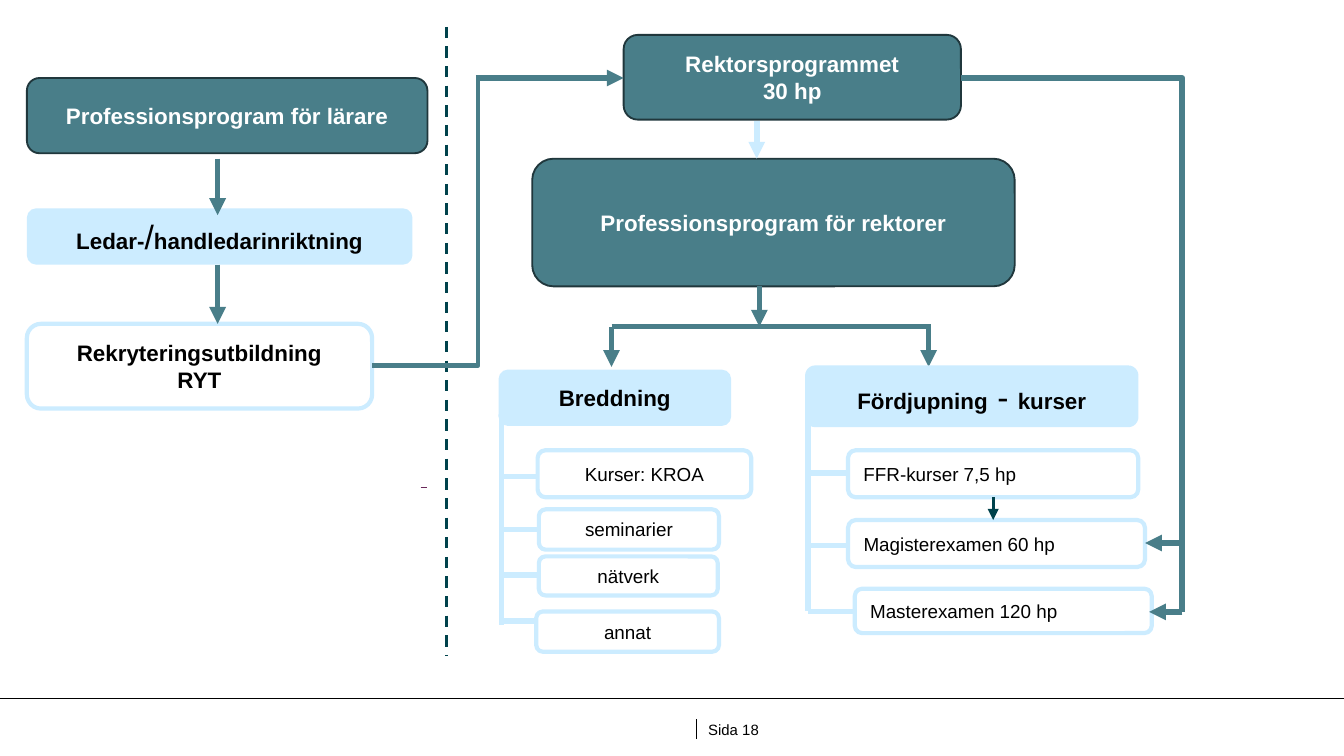
from lxml import etree
from pptx import Presentation
from pptx.dml.color import RGBColor
from pptx.enum.dml import MSO_LINE
from pptx.enum.shapes import MSO_CONNECTOR, MSO_SHAPE
from pptx.enum.text import MSO_ANCHOR, PP_ALIGN
from pptx.oxml.ns import qn
from pptx.util import Pt

ROUNDED = MSO_SHAPE.ROUNDED_RECTANGLE
STRAIGHT, ELBOW = MSO_CONNECTOR.STRAIGHT, MSO_CONNECTOR.ELBOW
DASH = MSO_LINE.DASH
LEFT, CENTER = PP_ALIGN.LEFT, PP_ALIGN.CENTER
MIDDLE = MSO_ANCHOR.MIDDLE

COLORS = {
    "teal": "497E89", "edge": "20373C", "pale": "CCECFF", "deep": "00424C",
    "plum": "692859", "white": "FFFFFF", "black": "000000",
}
BOX_STYLES = {
    "dark": {"fill": "teal", "line": "edge", "width": 1, "color": "white"},
    "light": {"fill": "pale", "line": None, "width": 0, "color": "black"},
    "outline": {"fill": "white", "line": "pale", "width": 2.25, "color": "black"},
}


def rgb(name):
    return RGBColor.from_string(COLORS[name])


def write_text(frame, paragraphs, size=12, bold=True, color="black", align=CENTER):
    frame.word_wrap = True
    for index, runs in enumerate(paragraphs):
        paragraph = frame.paragraphs[0] if index == 0 else frame.add_paragraph()
        paragraph.alignment = align
        for part in runs:
            text, run_size, run_bold = part if isinstance(part, tuple) else (part, size, bold)
            run = paragraph.add_run()
            run.text = text
            run.font.name = "Arial"
            run.font.size = Pt(run_size)
            run.font.bold = run_bold
            run.font.color.rgb = rgb(color)


def add_box(slide, box, paragraphs, style, **text_format):
    look = BOX_STYLES[style]
    shape = slide.shapes.add_shape(ROUNDED, *map(Pt, box))
    shape.shadow.inherit = False
    shape.fill.solid()
    shape.fill.fore_color.rgb = rgb(look["fill"])
    if look["line"]:
        shape.line.color.rgb = rgb(look["line"])
        shape.line.width = Pt(look["width"])
    else:
        shape.line.fill.background()
    shape.text_frame.vertical_anchor = MIDDLE
    write_text(shape.text_frame, paragraphs, color=look["color"], **text_format)


def add_line(slide, start, end, color="teal", width=3, arrow=False, dash=None, bent=False):
    kind = ELBOW if bent else STRAIGHT
    connector = slide.shapes.add_connector(kind, *map(Pt, (*start, *end)))
    connector.line.color.rgb = rgb(color)
    connector.line.width = Pt(width)
    if dash:
        connector.line.dash_style = dash
    properties = connector._element.spPr
    if bent:
        geometry = properties.find(qn("a:prstGeom"))
        geometry.set("prst", "bentConnector2")
    if arrow:
        etree.SubElement(properties.find(qn("a:ln")), qn("a:tailEnd"), type="triangle")
    etree.SubElement(properties, qn("a:effectLst"))


def add_teacher_program(slide, left, top):
    add_box(slide, (left, top, 214.6, 40.3), [["Professionsprogram för lärare"]], "dark")
    add_box(slide, (left, top + 69.8, 206.6, 30.2),
            [["Ledar-", ("/", 18, False), "handledarinriktning"]], "light")
    add_box(slide, (left, top + 131.7, 185, 45.4),
            [["Rekryteringsutbildning"], ["RYT"]], "outline")
    x = left + 102.2
    for start, end in ((43.2, 73.4), (100, 131.7)):
        add_line(slide, (x, top + start), (x, top + end), arrow=True)


def add_principal_program(slide, left, top):
    add_box(slide, (left + 49, top, 180.7, 45.4), [["Rektorsprogrammet"], ["30 hp"]], "dark")
    add_box(slide, (left, top + 66.3, 258.5, 68.4),
            [["Professionsprogram för rektorer"]], "dark")
    add_line(slide, (left + 120.3, top + 46.1), (left + 120.3, top + 66.3), "pale", arrow=True)
    split = top + 156.3
    add_line(slide, (left + 42.5, split), (left + 213.9, split))
    add_line(slide, (left + 121.7, top + 134.7), (left + 121.7, split), arrow=True)
    for x in (42.5, 212.4):
        add_line(slide, (left + x, split), (left + x, top + 177.9), arrow=True)


def add_branch(slide, box, heading, items, trunk_end, align):
    left, top, width, height = box
    add_box(slide, box, [heading], "light")
    trunk = left + 1.5
    add_line(slide, (trunk, top + 13.5), (trunk, top + trunk_end), "pale")
    for text, x, y, item_width, item_height, branch in items:
        add_line(slide, (trunk, top + branch), (left + x, top + branch), "pale")
        add_box(slide, (left + x, top + y, item_width, item_height), [[text]],
                "outline", size=10.1, bold=False, align=align)


def add_links(slide, left, top):
    add_line(slide, (left + 39.6, top - 27.4), (left + 39.6, top + 309.6), "deep", 1.5, dash=DASH)
    add_line(slide, (left + 26, top + 219.6), (left + 29.6, top + 219.6), "plum", 0.5)
    add_line(slide, (left, top + 154), (left + 56.9, top), width=2.25, bent=True)
    add_line(slide, (left + 55.5, top), (left + 134.7, top), arrow=True)
    right = left + 434
    add_line(slide, (left + 315.4, top), (right, top + 286), bent=True)
    for tip, y in ((414.1, 249.1), (416.2, 286)):
        add_line(slide, (right, top + y), (left + tip, top + y), arrow=True)
    add_line(slide, (left + 332.7, top + 224.6), (left + 332.7, top + 236.8),
             "deep", 1.5, arrow=True)


def add_footer(slide, left, top, width):
    add_line(slide, (left, top), (left + width, top), "black", 0.5)
    add_line(slide, (left + 373, top + 21.6), (left + 373, top + 10.8), "black", 0.5)
    label = slide.shapes.add_textbox(*map(Pt, (left + 379.4, top + 11.5, 36, 10.1)))
    frame = label.text_frame
    frame.margin_left = frame.margin_right = frame.margin_top = frame.margin_bottom = 0
    write_text(frame, [["Sida 18"]], size=8, bold=False, align=LEFT)


def main():
    presentation = Presentation()
    presentation.slide_width, presentation.slide_height = Pt(720), Pt(405)
    slide = presentation.slides.add_slide(presentation.slide_layouts[6])
    add_footer(slide, 0, 374.4, 720)
    add_teacher_program(slide, 14.4, 41.8)
    add_principal_program(slide, 285.1, 18.7)
    breadth = [
        ("Kurser: KROA", 20.9, 43.2, 114.5, 25.2, 57.2),
        ("seminarier", 21.6, 74.9, 96.5, 21.6, 85.7),
        ("nätverk", 21.6, 100.1, 95.8, 20.9, 110.2),
        ("annat", 20.2, 129.6, 97.9, 21.6, 134.6),
    ]
    depth = [
        ("FFR-kurser 7,5 hp", 23, 45.4, 155.5, 25.2, 57.6),
        ("Magisterexamen 60 hp", 23, 82.8, 159.1, 25.2, 96.5),
        ("Masterexamen 120 hp", 26.6, 119.6, 159.1, 23.8, 131.8),
    ]
    add_branch(slide, (267.1, 198, 124.6, 30.2), ["Breddning"], breadth, 136.8, CENTER)
    add_branch(slide, (431.3, 195.8, 178.6, 33.1),
               ["Fördjupning", (" - ", 18, False), "kurser"], depth, 131.8, LEFT)
    add_links(slide, 199.4, 41.8)
    presentation.save("out.pptx")


if __name__ == "__main__":
    main()
